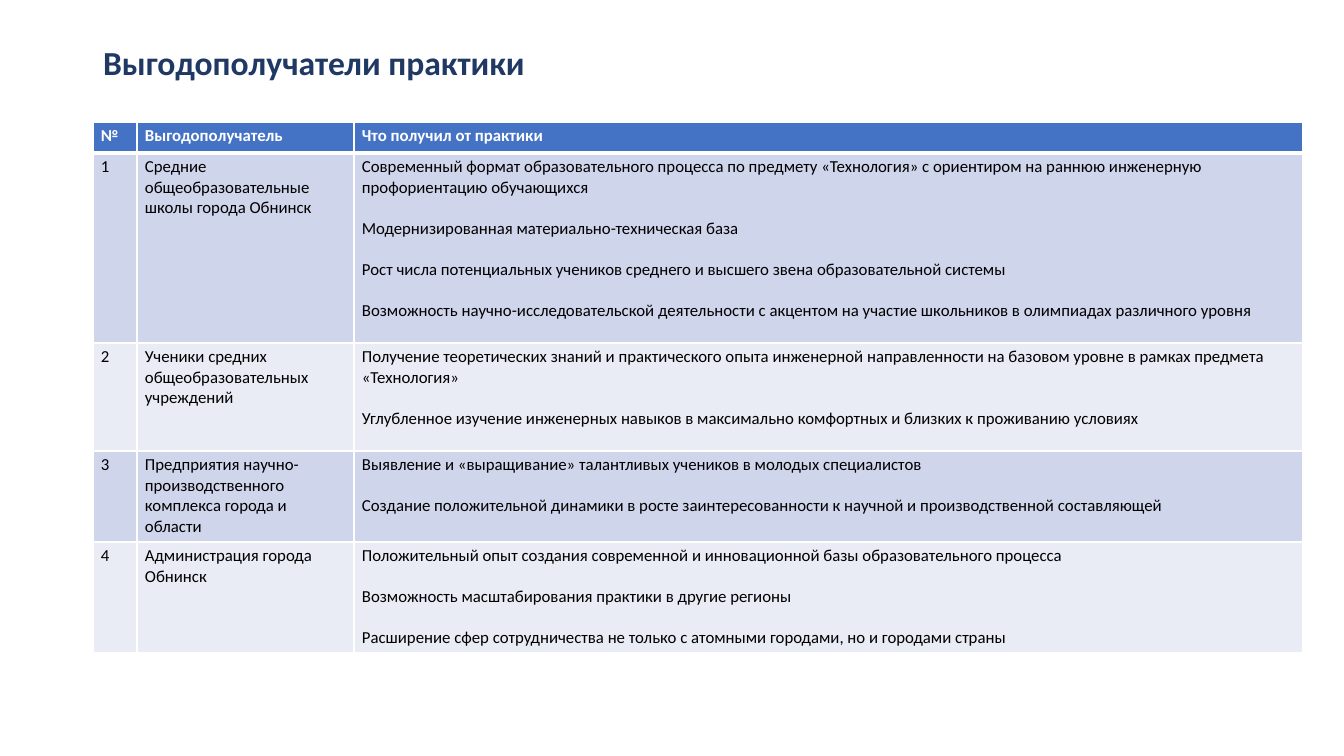
from lxml.etree import SubElement as Sub
from pptx import Presentation
from pptx.dml.color import RGBColor as RGB
from pptx.enum.text import MSO_ANCHOR as Anchor, PP_ALIGN as Align
from pptx.oxml.ns import qn
from pptx.util import Emu, Pt

SCALE = 914400 / 100.8
FONT = "Calibri"
HEX = {"title": "203864", "head": "4472C4", "odd": "CFD5EA",
       "even": "E9EBF5", "white": "FFFFFF", "black": "000000"}
COLS = [44, 217, 949]
ROWS = [31, 190, 108, 91, 111]
HEAD = ["№", "Выгодополучатель", "Что получил от практики"]
GAINS = [
    ("Средние общеобразовательные школы города Обнинск", [
        "Современный формат образовательного процесса по предмету «Технология» "
        "с ориентиром на раннюю инженерную профориентацию обучающихся",
        "Модернизированная материально-техническая база",
        "Рост числа потенциальных учеников среднего и высшего звена "
        "образовательной системы",
        "Возможность научно-исследовательской деятельности с акцентом "
        "на участие школьников в олимпиадах различного уровня"]),
    ("Ученики средних общеобразовательных учреждений", [
        "Получение теоретических знаний и практического опыта инженерной "
        "направленности на базовом уровне в рамках предмета «Технология»",
        "Углубленное изучение инженерных навыков в максимально комфортных "
        "и близких к проживанию условиях"]),
    ("Предприятия научно-производственного комплекса города и области", [
        "Выявление и «выращивание» талантливых учеников в молодых специалистов",
        "Создание положительной динамики в росте заинтересованности к научной "
        "и производственной составляющей"]),
    ("Администрация города Обнинск", [
        "Положительный опыт создания современной и инновационной базы "
        "образовательного процесса",
        "Возможность масштабирования практики в другие регионы",
        "Расширение сфер сотрудничества не только с атомными городами, "
        "но и городами страны"]),
]


def px(n):
    return Emu(round(n * SCALE))


def write(frame, lines, size=12, color="black", bold=False, gap=14.65, lead=None):
    """Put one paragraph per line, with the gap between them in points."""
    for i, line in enumerate(lines):
        para = frame.paragraphs[0] if i == 0 else frame.add_paragraph()
        para.alignment = Align.LEFT
        para.space_before = Pt(gap if i else 0)
        if lead:
            para.line_spacing = lead
        run = para.add_run()
        run.text = line
        font = run.font
        font.name, font.size, font.bold = FONT, Pt(size), bold
        font.color.rgb = RGB.from_string(HEX[color])


def edge(cell, side, width):
    line = Sub(cell._tc.get_or_add_tcPr(), qn("a:ln" + side), w=str(Pt(width)))
    fill = Sub(line, qn("a:solidFill"))
    Sub(fill, qn("a:srgbClr"), val=HEX["white"])


def paint(cell, fill, top=1, base=1):
    """Set borders first: the schema wants them ahead of the fill."""
    for side, width in zip("LRTB", (1, 1, top, base)):
        edge(cell, side, width)
    cell.fill.solid()
    cell.fill.fore_color.rgb = RGB.from_string(HEX[fill])
    cell.margin_left = cell.margin_right = px(8)
    cell.margin_top = cell.margin_bottom = px(4)
    cell.vertical_anchor = Anchor.TOP


def add_title(slide, text):
    title = slide.shapes.title
    title.left, title.top, title.width, title.height = map(px, (93, 24, 1159, 82))
    title.text_frame.word_wrap = True
    title.text_frame.vertical_anchor = Anchor.MIDDLE
    write(title.text_frame, [text], size=24, color="title", bold=True, lead=0.9)


def add_grid(slide):
    grid = slide.shapes.add_table(len(ROWS), len(COLS), px(93), px(122),
                                  px(sum(COLS)), px(sum(ROWS))).table
    for col, width in zip(grid.columns, COLS):
        col.width = px(width)
    for row, height in zip(grid.rows, ROWS):
        row.height = px(height)
    for c, text in enumerate(HEAD):
        cell = grid.cell(0, c)
        paint(cell, "head", base=3)
        write(cell.text_frame, [text], color="white", bold=True)
    for r, (who, gains) in enumerate(GAINS, 1):
        for c, lines in enumerate(([str(r)], [who], gains)):
            cell = grid.cell(r, c)
            paint(cell, "odd" if r % 2 else "even", top=3 if r == 1 else 1)
            write(cell.text_frame, lines)


def main():
    deck = Presentation()
    deck.slide_width, deck.slide_height = px(1344), px(756)
    slide = deck.slides.add_slide(deck.slide_layouts[5])
    add_title(slide, "Выгодополучатели практики")
    add_grid(slide)
    deck.save("out.pptx")


if __name__ == "__main__":
    main()
